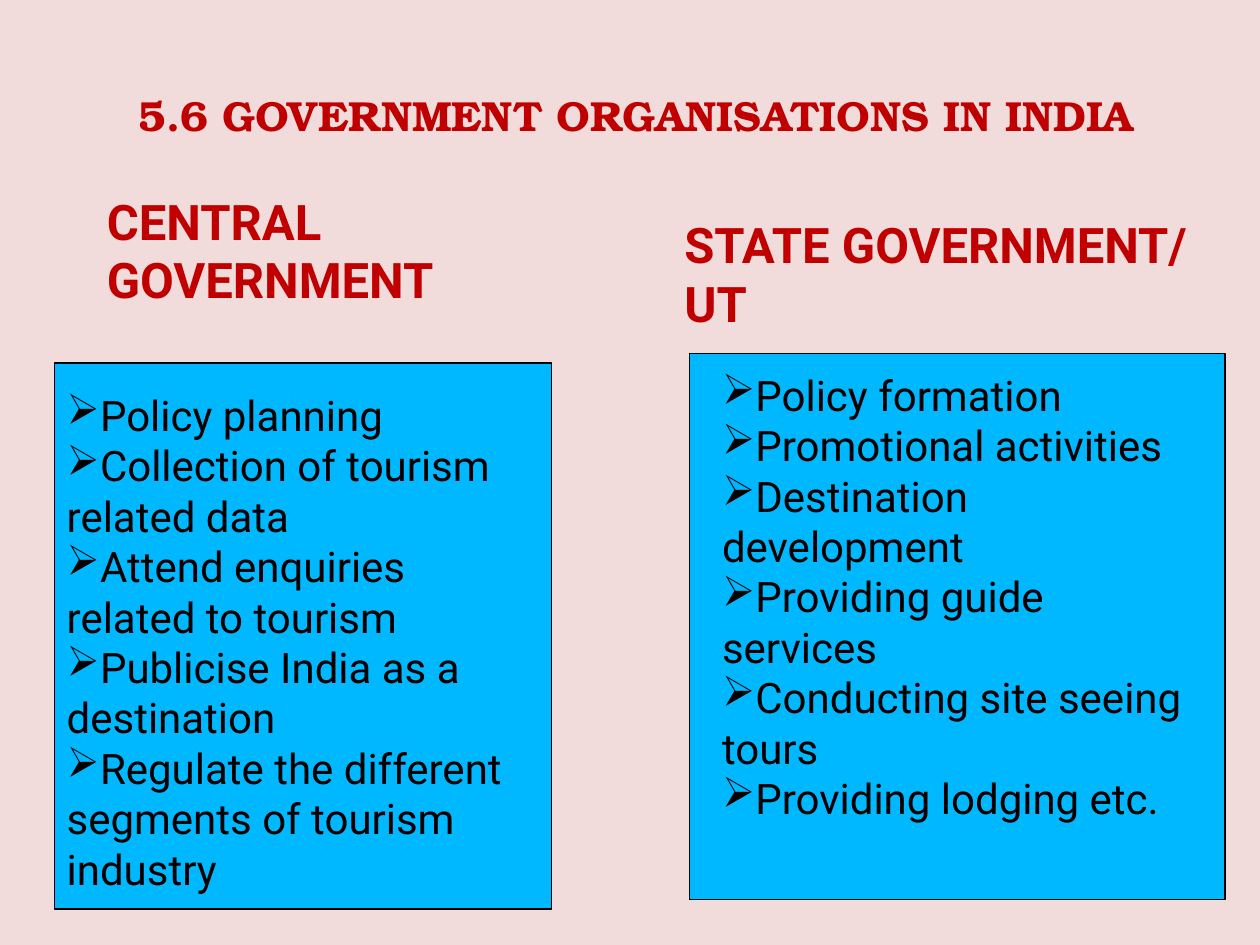
import pptx
import pptx.util
import pptx.dml.color
import pptx.enum.shapes
import pptx.enum.text
import pptx.oxml.ns
from lxml import etree

Pt = pptx.util.Pt
Anchor = pptx.enum.text.MSO_ANCHOR
RED, BLUE, BLACK, PINK = "C00000", "00B8FF", "000000", "F2DCDB"

CENTRAL = [
    "Policy planning",
    "Collection of tourism related data",
    "Attend enquiries related to tourism",
    "Publicise India as a destination",
    "Regulate the different segments of tourism industry",
]
STATE = [
    "Policy formation",
    "Promotional activities",
    "Destination development",
    "Providing guide services",
    "Conducting site seeing tours",
    "Providing lodging etc.",
]


def paint(color, code):
    color.rgb = pptx.dml.color.RGBColor.from_string(code)


def add_text(slide, area, lines, size, code, face="Roboto", bold=False,
             anchor=Anchor.TOP):
    """Add a wrapped text box with one paragraph per line."""
    frame = slide.shapes.add_textbox(*map(Pt, area)).text_frame
    frame.word_wrap = True
    frame.vertical_anchor = anchor
    frame.text = "\n".join(lines)
    for para in frame.paragraphs:
        para.font.size = Pt(size)
        para.font.name = face
        para.font.bold = bold
        paint(para.font.color, code)
    return frame


def add_panel(slide, area):
    """Add a blue panel with a thin black outline."""
    panel = slide.shapes.add_shape(
        pptx.enum.shapes.MSO_SHAPE.RECTANGLE, *map(Pt, area))
    panel.shadow.inherit = False
    panel.fill.solid()
    paint(panel.fill.fore_color, BLUE)
    paint(panel.line.color, BLACK)
    panel.line.width = Pt(0.75)


def add_head(slide, area, text):
    add_text(slide, area, [text], 28, RED, bold=True, anchor=Anchor.BOTTOM)


def add_list(slide, area, items):
    """Add arrow bullets whose wrapped lines return to the margin."""
    frame = add_text(slide, area, items, 24, BLACK)
    for para in frame.paragraphs:
        props = para._p.get_or_add_pPr()
        props.set("marL", "0")
        props.set("indent", "0")
        mark = etree.SubElement(props, pptx.oxml.ns.qn("a:buChar"))
        mark.set("char", "➢")
        # Bullet must precede the default run properties
        props.insert(0, mark)


def main():
    deck = pptx.Presentation()
    deck.slide_width, deck.slide_height = Pt(720), Pt(540)
    slide = deck.slides.add_slide(deck.slide_layouts[6])
    slide.background.fill.solid()
    paint(slide.background.fill.fore_color, PINK)

    # Title
    add_text(slide, (72, 26, 617, 79),
             ["5.6 GOVERNMENT ORGANISATIONS IN INDIA"], 24, RED,
             face="TeX Gyre Bonum", bold=True, anchor=Anchor.MIDDLE)

    # Central government column
    add_head(slide, (54, 116.5, 272, 63.5), "CENTRAL GOVERNMENT")
    add_panel(slide, (31, 207.5, 284, 312))
    add_list(slide, (31, 219, 284, 298), CENTRAL)

    # State government column
    add_head(slide, (384, 111.5, 321, 82), "STATE GOVERNMENT/ UT")
    add_panel(slide, (394, 202, 306, 312))
    add_list(slide, (405.5, 207.5, 284, 269), STATE)

    deck.save("out.pptx")


if __name__ == "__main__":
    main()
